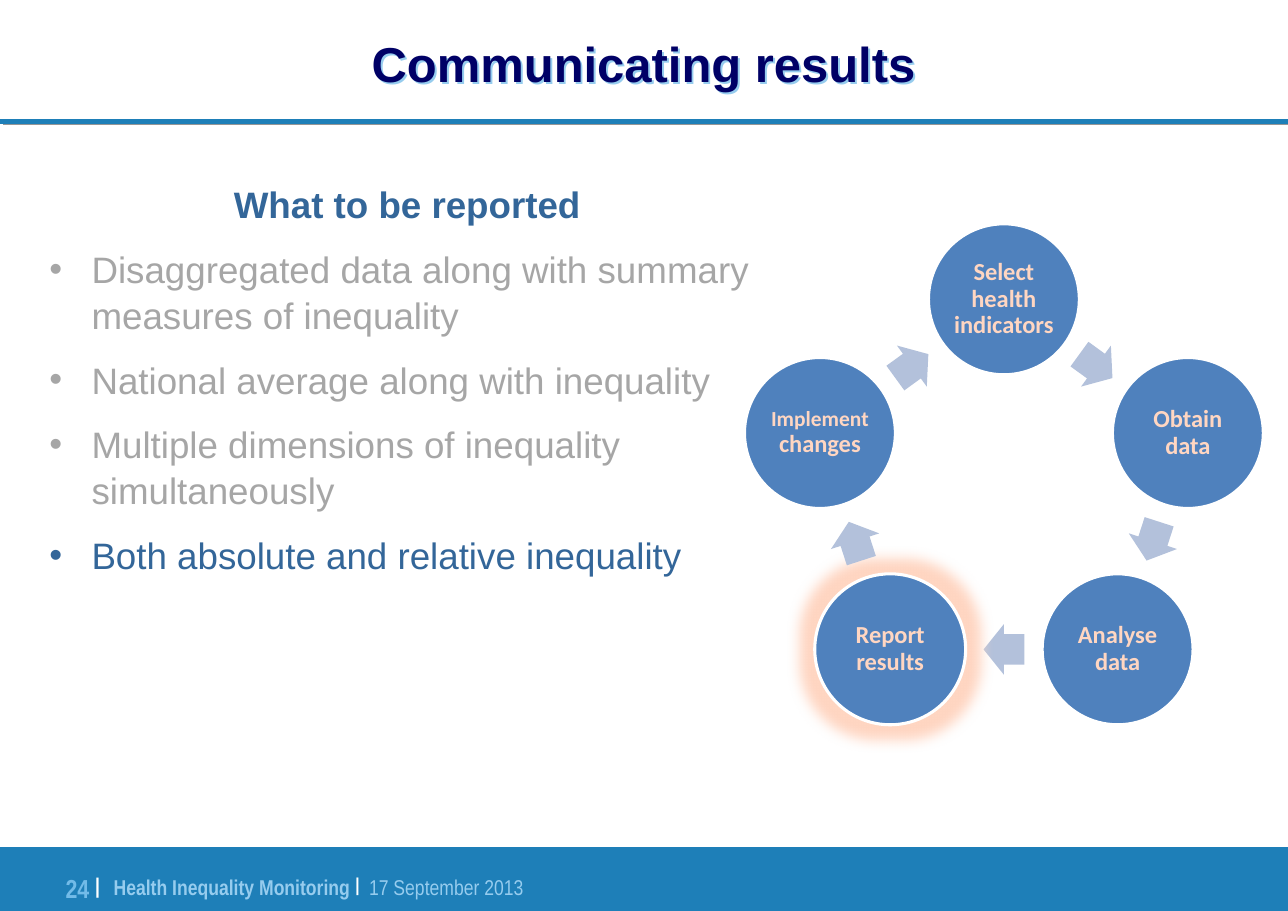
import math
from typing import NamedTuple

from lxml import etree
from pptx import Presentation
from pptx import util as u
from pptx.dml.color import RGBColor
from pptx.enum import shapes, text
from pptx.oxml.ns import qn

COLOURS = {
    "band": "1E7FB8", "shadow": "969696", "footer": "96CCEE", "number": "72BBE8",
    "title": "000066", "accent": "336699", "muted": "A6A6A6", "circle": "4F81BD",
    "arrow": "B3C1DB", "peach": "FFD6C2", "white": "FFFFFF",
}
SLIDE_WIDTH, SLIDE_HEIGHT = 29.7, 21.0
CENTRE_X, CENTRE_Y = 23.15, 11.36
STEP_RADIUS, ARROW_RADIUS = 4.46, 3.61
CIRCLE_SIZE = 3.48
ARROW_WIDTH, ARROW_HEIGHT = 0.94, 1.17


class Span(NamedTuple):
    text: str
    size: float
    colour: str
    font: str = "Arial"
    bold: bool = False
    raised: int = 0  # baseline shift in percent


class Step(NamedTuple):
    spans: list[Span]
    glowing: bool = False


class Item(NamedTuple):
    text: str
    colour: str


def label(words: str, size: float = 16) -> Span:
    return Span(words, size, "peach", "Calibri", True)


def footer_span(words: str, size: float, colour: str, bold: bool = True, raised: int = 0) -> Span:
    return Span(words, size, colour, "Arial Narrow", bold, raised)


STEPS = [
    Step([label("Select health indicators")]),
    Step([label("Obtain data")]),
    Step([label("Analyse data")]),
    Step([label("Report results")], glowing=True),
    Step([label("Implement ", 14), label("changes")]),
]
ITEMS = [
    Item("Disaggregated data along with summary measures of inequality", "muted"),
    Item("National average along with inequality", "muted"),
    Item("Multiple dimensions of inequality simultaneously", "muted"),
    Item("Both absolute and relative inequality", "accent"),
]
FOOTER = [
    footer_span("Health Inequality Monitoring ", 14, "footer"),
    footer_span("|", 21, "white", raised=12),
    footer_span("\t17 September 2013", 14, "footer", bold=False),
]
PAGE_NUMBER = [footer_span("24 ", 17, "number"), footer_span("|", 24, "white", raised=14)]


def rgb(name: str) -> RGBColor:
    return RGBColor.from_string(COLOURS[name])


def place(shape, left: float, top: float, width: float, height: float) -> None:
    shape.left, shape.top = u.Cm(left), u.Cm(top)
    shape.width, shape.height = u.Cm(width), u.Cm(height)


def set_frame(frame, anchor, margin: float = 0) -> None:
    frame.word_wrap = True
    frame.auto_size = text.MSO_AUTO_SIZE.NONE
    frame.vertical_anchor = anchor
    frame.margin_left = frame.margin_right = u.Cm(margin)
    frame.margin_top = frame.margin_bottom = u.Cm(margin)


def format_run(run, style: Span) -> None:
    font = run.font
    font.name, font.size, font.bold = style.font, u.Pt(style.size), style.bold
    font.color.rgb = rgb(style.colour)
    if style.raised:
        run._r.get_or_add_rPr().set("baseline", str(style.raised * 1000))


def write_spans(para, spans: list[Span], align) -> None:
    para.alignment = align
    for style in spans:
        run = para.add_run()
        run.text = style.text
        format_run(run, style)


def add_effect(shape, kind: str, colour: str, **settings: int) -> None:
    """Put one effect, such as glow or outerShdw, on a shape or connector."""
    properties = shape.element.spPr
    effects = properties.find(qn("a:effectLst"))
    if effects is None:
        effects = etree.SubElement(properties, qn("a:effectLst"))
    effect = etree.SubElement(effects, qn(f"a:{kind}"))
    for name, value in settings.items():
        effect.set(name, str(value))
    etree.SubElement(effect, qn("a:srgbClr")).set("val", COLOURS[colour])


def add_solid(page, kind, colour: str, left: float, top: float, width: float, height: float):
    shape = page.shapes.add_shape(kind, 0, 0, 0, 0)
    place(shape, left, top, width, height)
    shape.fill.solid()
    shape.fill.fore_color.rgb = rgb(colour)
    shape.line.fill.background()
    shape.shadow.inherit = False
    return shape


def add_text(page, spans: list[Span], align, left: float, top: float, width: float, height: float):
    box = page.shapes.add_textbox(0, 0, 0, 0)
    place(box, left, top, width, height)
    set_frame(box.text_frame, text.MSO_ANCHOR.TOP)
    para = box.text_frame.paragraphs[0]
    write_spans(para, spans, align)
    return para


def on_ring(radius: float, degrees: float, width: float, height: float) -> tuple[float, float]:
    """Left and top of a box centred on the cycle, clockwise from twelve o'clock."""
    angle = math.radians(degrees)
    return (CENTRE_X + radius * math.sin(angle) - width / 2,
            CENTRE_Y - radius * math.cos(angle) - height / 2)


def draw_cycle(page) -> None:
    turn = 360 / len(STEPS)
    for index, step in enumerate(STEPS):
        left, top = on_ring(STEP_RADIUS, index * turn, CIRCLE_SIZE, CIRCLE_SIZE)
        circle = add_solid(page, shapes.MSO_SHAPE.OVAL, "circle", left, top, CIRCLE_SIZE, CIRCLE_SIZE)
        circle.line.color.rgb = rgb("white")
        circle.line.width = u.Pt(2)
        if step.glowing:
            add_effect(circle, "glow", "peach", rad=u.Pt(18))
        set_frame(circle.text_frame, text.MSO_ANCHOR.MIDDLE, 0.05)
        para = circle.text_frame.paragraphs[0]
        para.line_spacing = 0.9
        write_spans(para, step.spans, text.PP_ALIGN.CENTER)

        middle = (index + 0.5) * turn
        left, top = on_ring(ARROW_RADIUS, middle, ARROW_WIDTH, ARROW_HEIGHT)
        arrow = add_solid(page, shapes.MSO_SHAPE.RIGHT_ARROW, "arrow", left, top, ARROW_WIDTH, ARROW_HEIGHT)
        arrow.adjustments[0], arrow.adjustments[1] = 0.6, 0.5
        arrow.rotation = middle


def draw_frame(page) -> None:
    rule = page.shapes.add_connector(
        shapes.MSO_CONNECTOR.STRAIGHT, 0, u.Cm(2.8), u.Cm(SLIDE_WIDTH), u.Cm(2.8))
    rule.line.color.rgb = rgb("band")
    rule.line.width = u.Pt(3)
    add_effect(rule, "outerShdw", "shadow", dist=u.Pt(2.2), dir=27 * 60000)
    add_solid(page, shapes.MSO_SHAPE.RECTANGLE, "band", 0, 19.53, SLIDE_WIDTH, SLIDE_HEIGHT - 19.53)
    footer = add_text(page, FOOTER, text.PP_ALIGN.LEFT, 2.62, 19.91, 10.7, 0.71)
    tabs = etree.SubElement(footer._p.get_or_add_pPr(), qn("a:tabLst"))
    etree.SubElement(tabs, qn("a:tab"), pos=str(u.Cm(5.89)), algn="l")
    add_text(page, PAGE_NUMBER, text.PP_ALIGN.RIGHT, 1.17, 19.86, 1.14, 1.02)


def fill_title(title) -> None:
    place(title, 0, 0, SLIDE_WIDTH, 2.9)
    title.fill.background()
    add_effect(title, "outerShdw", "footer", dist=u.Pt(1.8), dir=45 * 60000)
    set_frame(title.text_frame, text.MSO_ANCHOR.MIDDLE)
    title.text_frame.text = "Communicating results"
    para = title.text_frame.paragraphs[0]
    para.alignment = text.PP_ALIGN.CENTER
    format_run(para.runs[0], Span(para.text, 32, "title", bold=True))


def fill_body(body) -> None:
    place(body, 0.89, 4.06, 17, 10.95)
    frame = body.text_frame
    set_frame(frame, text.MSO_ANCHOR.TOP)
    frame.margin_left = frame.margin_right = u.Cm(0.25)
    frame.margin_top = frame.margin_bottom = u.Cm(0.13)
    for index, item in enumerate([Item("What to be reported", "accent"), *ITEMS]):
        heading = index == 0
        para = frame.paragraphs[0] if heading else frame.add_paragraph()
        para.text = item.text
        properties = para._p.get_or_add_pPr()
        indent = 0 if heading else u.Cm(0.97)
        properties.set("marL", str(indent))
        properties.set("indent", str(-indent))
        if heading:
            etree.SubElement(properties, qn("a:buNone"))
        else:
            etree.SubElement(properties, qn("a:buChar")).set("char", "•")
            para.line_spacing = 1.05
        para.alignment = text.PP_ALIGN.CENTER if heading else text.PP_ALIGN.LEFT
        para.space_before = u.Pt(0 if heading else 6)
        para.space_after = u.Pt(6)
        format_run(para.runs[0], Span(item.text, 24, item.colour, bold=heading))


def main() -> None:
    deck = Presentation()
    deck.slide_width, deck.slide_height = u.Cm(SLIDE_WIDTH), u.Cm(SLIDE_HEIGHT)
    page = deck.slides.add_slide(deck.slide_layouts[1])
    draw_frame(page)
    fill_title(page.shapes.title)
    fill_body(page.placeholders[1])
    draw_cycle(page)
    deck.save("out.pptx")


if __name__ == "__main__":
    main()
